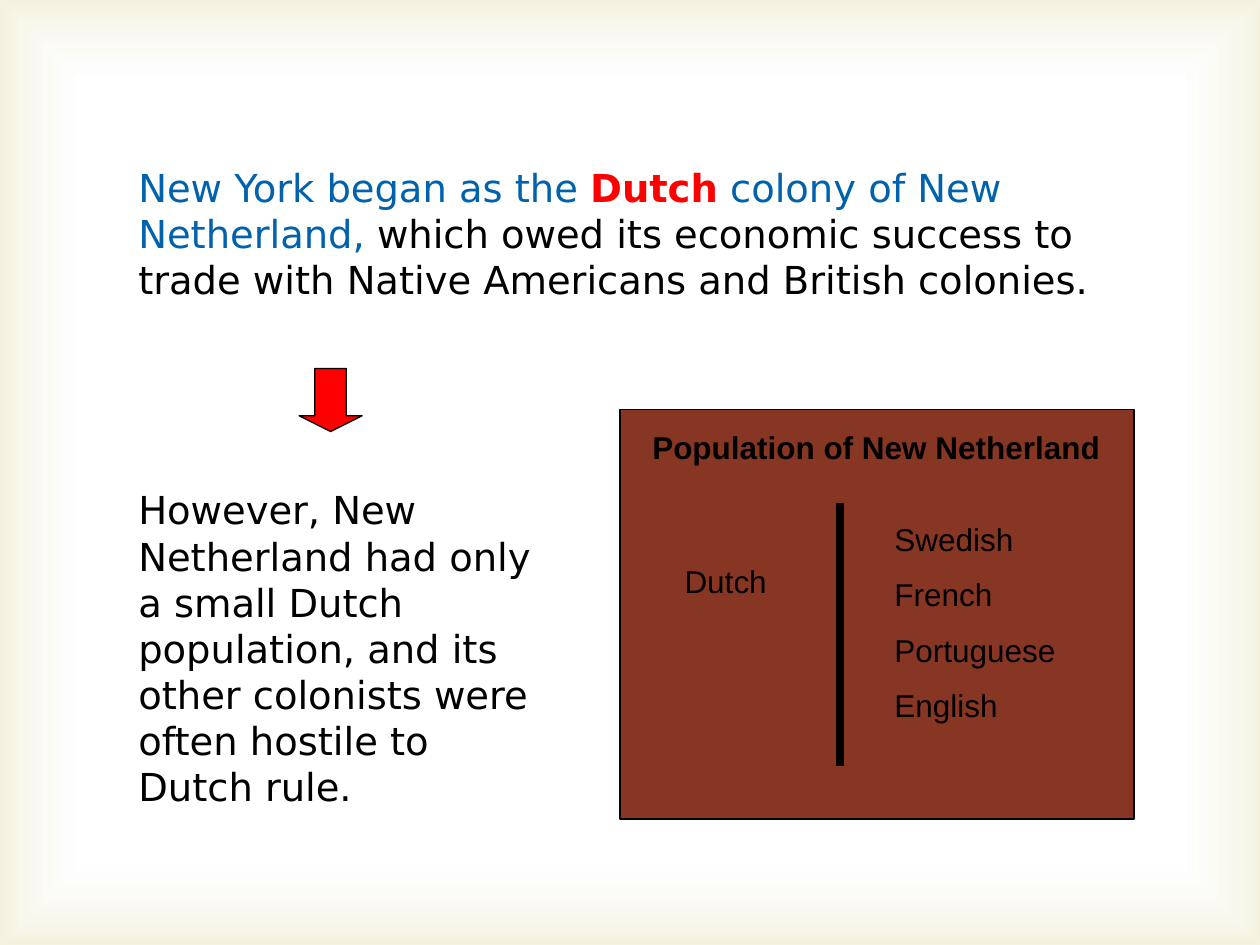
from lxml.etree import SubElement
from pptx import Presentation
from pptx.dml.color import RGBColor
from pptx.enum.shapes import MSO_CONNECTOR, MSO_SHAPE
from pptx.oxml import parse_xml
from pptx.oxml.ns import nsdecls, qn
from pptx.util import Cm, Pt

COLORS = {
    "white": "FFFFFF",
    "black": "000000",
    "red": "FF0000",
    "blue": "0062AC",
    "brown": "873624",
    "cream": "D1CA75",
}
WIDE, HIGH = 25.4, 19.05
BODY = ("DejaVu Sans", 22)
LABEL = ("Arial", 18)


def color(name):
    return RGBColor.from_string(COLORS[name])


def add_glow(slide):
    """Cover the slide with a faint gradient that tints its edges."""
    glow = slide.shapes.add_shape(MSO_SHAPE.RECTANGLE, 0, 0, Cm(WIDE), Cm(HIGH))
    glow.shadow.inherit = False
    glow.line.fill.background()
    stops = "".join(
        f'<a:gs pos="{pos * 1000}"><a:srgbClr val="{COLORS[name]}">'
        f'<a:alpha val="{alpha * 1000}"/></a:srgbClr></a:gs>'
        for pos, name, alpha in [(83, "white", 11), (100, "cream", 23)]
    )
    grad = parse_xml(
        f'<a:gradFill {nsdecls("a")} rotWithShape="1"><a:gsLst>{stops}</a:gsLst>'
        '<a:path path="rect"><a:fillToRect l="50000" t="50000" r="50000" b="50000"/>'
        "</a:path></a:gradFill>"
    )
    glow._element.spPr.find(qn("a:prstGeom")).addnext(grad)


def add_block(shapes, kind, box, fill):
    block = shapes.add_shape(kind, *map(Cm, box))
    block.shadow.inherit = False
    block.fill.solid()
    block.fill.fore_color.rgb = color(fill)
    block.line.color.rgb = color("black")
    block.line.width = Pt(0.75)


def add_rule(shapes, x, top, end):
    rule = shapes.add_connector(MSO_CONNECTOR.STRAIGHT, Cm(x), Cm(top), Cm(x), Cm(end))
    rule.line.color.rgb = color("black")
    rule.line.width = Pt(4.5)
    SubElement(rule._element.spPr, qn("a:effectLst"))


def add_text(shapes, box, paras, style):
    """Add paragraphs, each a list of (text, color, bold) runs."""
    face, size = style
    frame = shapes.add_textbox(*map(Cm, box)).text_frame
    frame.word_wrap = True
    for i, runs in enumerate(paras):
        para = frame.add_paragraph() if i else frame.paragraphs[0]
        if i:
            para.space_before = Pt(10)
        for text, name, bold in runs:
            run = para.add_run()
            run.text = text
            run.font.name = face
            run.font.size = Pt(size)
            run.font.bold = bold
            run.font.color.rgb = color(name)


def add_panel(slide):
    """Group the population box with its title, rule and labels."""
    shapes = slide.shapes.add_group_shape().shapes
    add_block(shapes, MSO_SHAPE.RECTANGLE, (12.5, 8.25, 10.36, 8.26), "brown")
    add_rule(shapes, 16.93, 10.14, 15.45)
    add_text(shapes, (13.55, 11.2, 2.54, 1.02), [[("Dutch", "black", False)]], LABEL)
    names = ["Swedish", "French", "Portuguese", "English"]
    others = [[(name, "black", False)] for name in names]
    add_text(shapes, (17.78, 10.36, 5.08, 4.47), others, LABEL)
    title = [[("Population of New Netherland", "black", True)]]
    add_text(shapes, (12.9, 8.51, 9.74, 1.02), title, LABEL)


def main():
    deck = Presentation()
    deck.slide_width, deck.slide_height = Cm(WIDE), Cm(HIGH)
    slide = deck.slides.add_slide(deck.slide_layouts[6])
    add_glow(slide)
    intro = [
        ("New York began as the ", "blue", False),
        ("Dutch", "red", True),
        (" colony of New Netherland, ", "blue", False),
        ("which owed its economic success to trade with Native Americans "
         "and British colonies.", "black", False),
    ]
    add_text(slide.shapes, (2.54, 3.18, 20.32, 3.07), [intro], BODY)
    turn = [
        ("However, New Netherland had only a small Dutch population, "
         "and its other colonists were often hostile to Dutch rule.", "black", False),
    ]
    add_text(slide.shapes, (2.54, 9.68, 8.46, 6.83), [turn], BODY)
    arrow = (6.03, 7.43, 1.27, 1.27)
    add_block(slide.shapes, MSO_SHAPE.DOWN_ARROW, arrow, "red")
    # The arrowhead takes a quarter of the arrow's height.
    slide.shapes[-1].adjustments[1] = 0.25
    add_panel(slide)
    deck.save("out.pptx")


if __name__ == "__main__":
    main()
